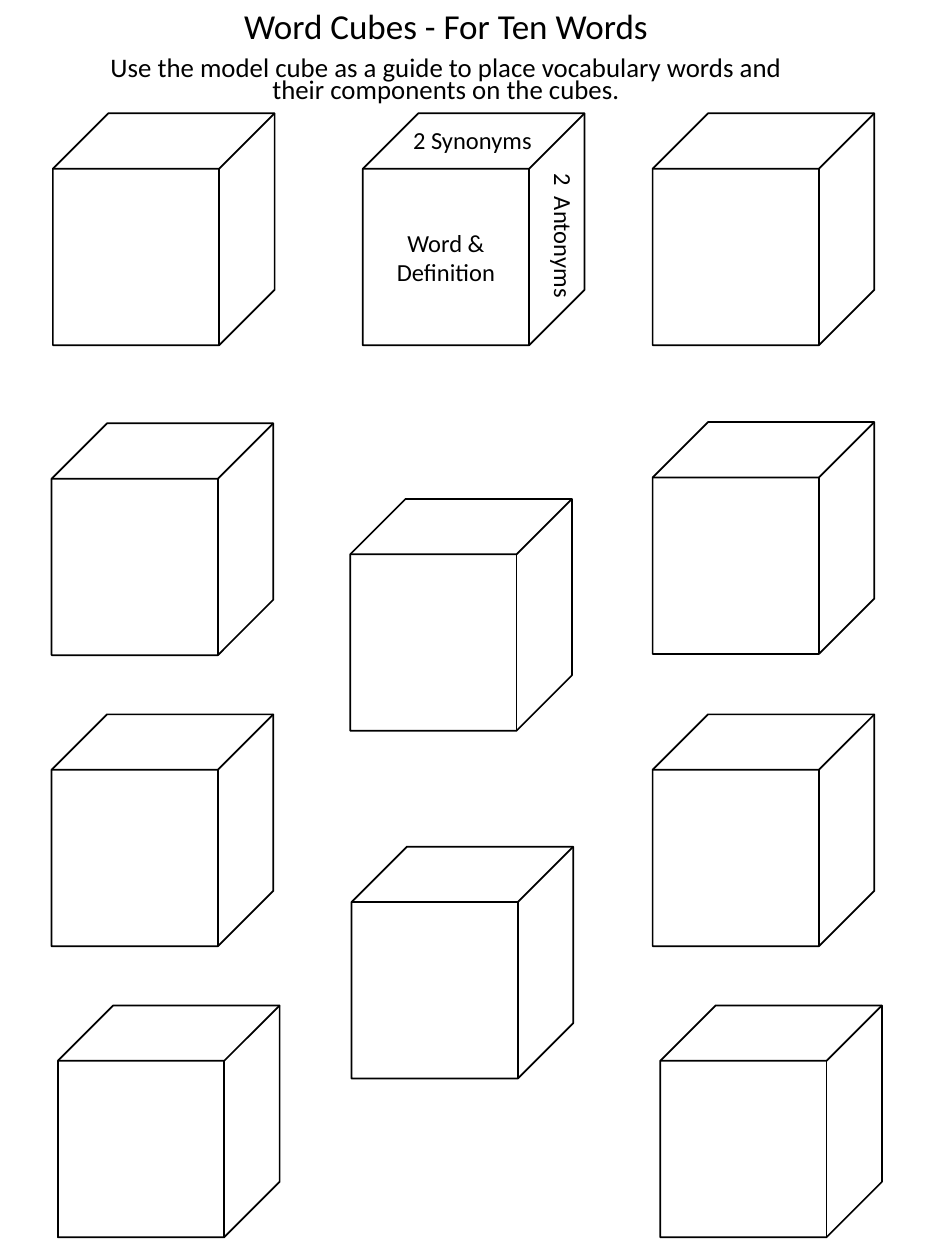
import pptx
import pptx.dml.color
import pptx.enum.shapes
import pptx.enum.text
import pptx.util
from pptx.util import Inches

ALIGN = pptx.enum.text.PP_ALIGN
ANCHOR = pptx.enum.text.MSO_ANCHOR
BLACK = "000000"
CUBE_WIDTH, CUBE_HEIGHT = 1.76, 1.84


def color(value):
    return pptx.dml.color.RGBColor.from_string(value)


def write(shape, text, size=14, align=ALIGN.CENTER, anchor=ANCHOR.TOP,
          wrap=True, line_spacing=1.0, space_before=0):
    frame = shape.text_frame
    frame.word_wrap = wrap
    frame.vertical_anchor = anchor
    frame.text = text
    for paragraph in frame.paragraphs:
        paragraph.alignment = align
        paragraph.line_spacing = line_spacing
        paragraph.space_before = pptx.util.Pt(space_before)
        for run in paragraph.runs:
            run.font.name = "Calibri"
            run.font.size = pptx.util.Pt(size)
            run.font.color.rgb = color(BLACK)


presentation = pptx.Presentation()
presentation.slide_width = Inches(7.5)
presentation.slide_height = Inches(10)
slide = presentation.slides.add_slide(presentation.slide_layouts[6])
shapes = slide.shapes

title = shapes.add_textbox(Inches(0.35), Inches(0), Inches(6.38), Inches(0.42))
write(title, "Word Cubes - For Ten Words", size=20, anchor=ANCHOR.BOTTOM, line_spacing=0.9)

subtitle = shapes.add_textbox(Inches(0.73), Inches(0.42), Inches(5.62), Inches(0.48))
write(subtitle, "Use the model cube as a guide to place vocabulary words and their components on the cubes.",
      size=15.3, line_spacing=0.7, space_before=7.5)

cube_positions = [
    (2.88, 0.9), (5.18, 0.9), (0.42, 0.9),
    (0.41, 3.36), (2.78, 3.96), (5.18, 3.35),
    (2.79, 6.72), (5.18, 5.67), (0.41, 5.67),
    (0.46, 7.98), (5.24, 7.98),
]
cubes = []
for left, top in cube_positions:
    cube = shapes.add_shape(pptx.enum.shapes.MSO_SHAPE.CUBE, Inches(left), Inches(top),
                            Inches(CUBE_WIDTH), Inches(CUBE_HEIGHT))
    cube.shadow.inherit = False
    cube.fill.background()
    cube.line.color.rgb = color(BLACK)
    cube.line.width = pptx.util.Pt(1)
    cubes.append(cube)

model_cube = cubes[0]
write(model_cube, "Word &\nDefinition", anchor=ANCHOR.MIDDLE)

synonyms = shapes.add_textbox(Inches(3.18), Inches(0.94), Inches(1.15), Inches(0.34))
write(synonyms, "2 Synonyms", align=ALIGN.LEFT, wrap=False)

antonyms = shapes.add_textbox(Inches(3.87), Inches(1.7), Inches(1.2), Inches(0.34))
antonyms.rotation = 90
write(antonyms, "2  Antonyms", wrap=False)

presentation.save("out.pptx")
